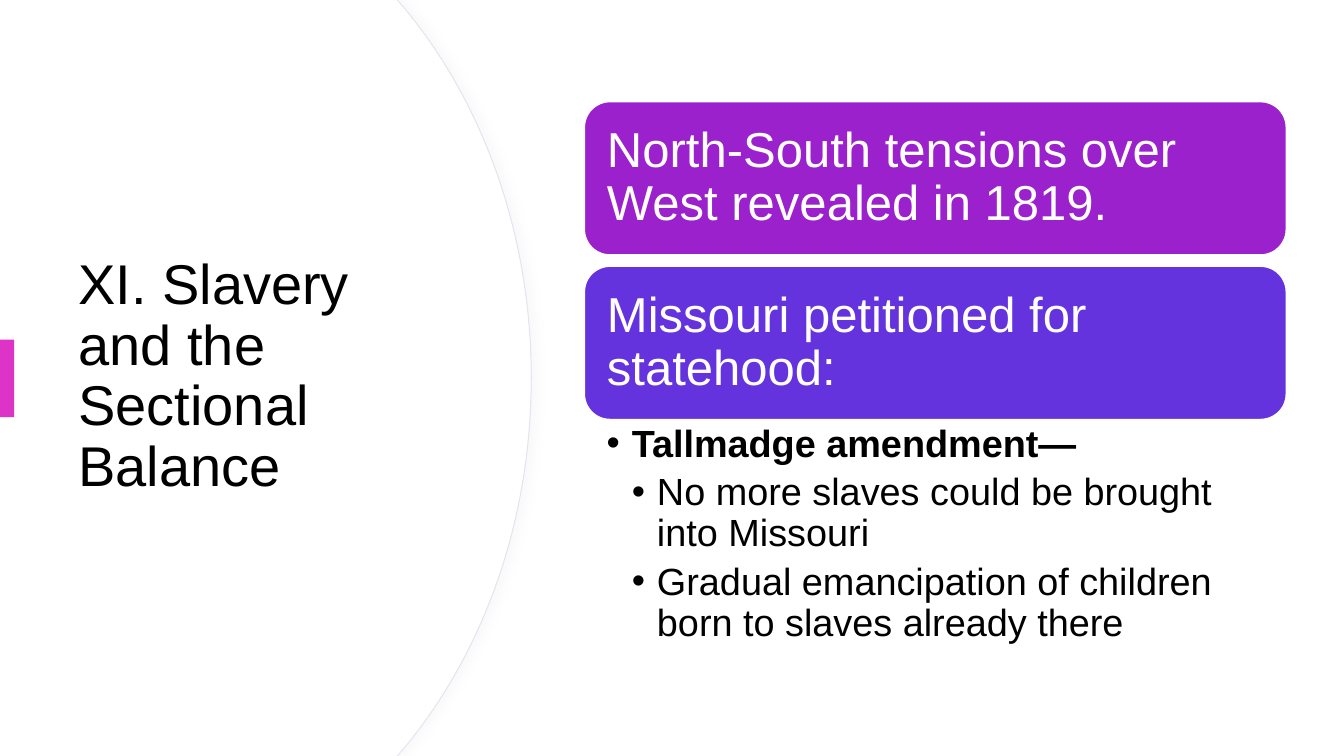
from dataclasses import dataclass

from lxml.etree import SubElement
from pptx import Presentation
from pptx.dml.color import RGBColor
from pptx.enum.shapes import MSO_SHAPE
from pptx.enum.text import MSO_ANCHOR, PP_ALIGN
from pptx.oxml.ns import qn
from pptx.shapes.autoshape import Shape
from pptx.slide import Slide
from pptx.text.text import TextFrame
from pptx.util import Inches, Pt


@dataclass(frozen=True)
class Theme:
    font: str = "Arial"
    text: str = "000000"
    surface: str = "FFFFFF"
    outline: str = "E3E4EF"
    shade: str = "D9D9D9"
    accent: str = "DD33C7"
    purple: str = "9A21CB"
    violet: str = "6533DD"
    title_size: float = 40
    card_size: float = 35
    bullet_size: float = 27
    line_spacing: float = 0.9
    bullet_gap: float = 5.5


@dataclass(frozen=True)
class Area:
    left: float
    top: float
    width: float
    height: float


@dataclass(frozen=True)
class Card:
    text: str
    color: str


@dataclass(frozen=True)
class Bullet:
    text: str
    level: int
    bold: bool = False


THEME = Theme()
WIDTH, HEIGHT = Inches(13.33), Inches(7.5)

TITLE = "XI. Slavery and the Sectional Balance"
BACKDROP_AREA = Area(0, 0, 100, 100)
TITLE_AREA = Area(5.1, 16.93, 29.56, 66)
ACCENT_AREA = Area(0, 44.93, 1.05, 10.27)
FIRST_CARD = Area(43.48, 13.45, 52.22, 20.27)
CARD_GAP = 1.5
BULLETS_HEIGHT = 31.2
INDENT = Inches(0.25)

UPPER_EDGE = ((29.56, 0), (30.08, 1.07), (35.93, 13.6), (39.53, 30.93), (39.53, 50))
CURVE_STARTS = (2, 5)
PANEL_INSET = 0.07

CARDS = (
    Card("North-South tensions over West revealed in 1819.", THEME.purple),
    Card("Missouri petitioned for statehood:", THEME.violet),
)
BULLETS = (
    Bullet("Tallmadge amendment—", 1, bold=True),
    Bullet("No more slaves could be brought into Missouri", 2),
    Bullet("Gradual emancipation of children born to slaves already there", 2),
)


def across(share: float) -> int:
    return round(WIDTH * share / 100)


def down(share: float) -> int:
    return round(HEIGHT * share / 100)


def place(area: Area) -> tuple[int, int, int, int]:
    return across(area.left), down(area.top), across(area.width), down(area.height)


def paint(shape: Shape, fill: str, line: str | None = None, weight: float = 1) -> None:
    shape.shadow.inherit = False
    shape.fill.solid()
    shape.fill.fore_color.rgb = RGBColor.from_string(fill)
    if line is None:
        shape.line.fill.background()
    else:
        shape.line.color.rgb = RGBColor.from_string(line)
        shape.line.width = Pt(weight)


def cast_shadow(shape: Shape) -> None:
    effects = shape._element.spPr.find(qn("a:effectLst"))
    shadow = SubElement(
        effects, qn("a:outerShdw"), blurRad=str(Pt(6)), dist=str(Pt(4)), dir="0"
    )
    color = SubElement(shadow, qn("a:srgbClr"), val=THEME.shade)
    SubElement(color, qn("a:alpha"), val="15000")


def set_up_frame(frame: TextFrame, anchor: MSO_ANCHOR, *insets: float) -> None:
    frame.word_wrap = True
    frame.vertical_anchor = anchor
    left, top, right, bottom = (Inches(inset) for inset in insets)
    frame.margin_left, frame.margin_right = left, right
    frame.margin_top, frame.margin_bottom = top, bottom


def write(paragraph, text: str, size: float, color: str, bold: bool = False) -> None:
    paragraph.alignment = PP_ALIGN.LEFT
    paragraph.line_spacing = THEME.line_spacing
    run = paragraph.add_run()
    run.text = text
    run.font.name = THEME.font
    run.font.size = Pt(size)
    run.font.bold = bold
    run.font.color.rgb = RGBColor.from_string(color)


def bend(shape: Shape) -> None:
    segments = list(shape._element.iter(qn("a:lnTo")))
    for start in CURVE_STARTS:
        curve, *others = segments[start : start + 3]
        curve.tag = qn("a:cubicBezTo")
        for other in others:
            curve.append(other[0])
            other.getparent().remove(other)


def add_panel(slide: Slide, inset: float) -> Shape:
    lower_edge = [(x, 100 - y) for x, y in reversed(UPPER_EDGE[:-1])]
    edge = [(across(x - inset), down(y)) for x, y in [*UPPER_EDGE, *lower_edge]]
    builder = slide.shapes.build_freeform(0, 0)
    builder.add_line_segments(edge + [(0, HEIGHT)], close=True)
    panel = builder.convert_to_shape()
    bend(panel)
    return panel


def add_block(slide: Slide, area: Area, color: str) -> None:
    paint(slide.shapes.add_shape(MSO_SHAPE.RECTANGLE, *place(area)), color)


def add_title(slide: Slide) -> None:
    frame = slide.shapes.add_textbox(*place(TITLE_AREA)).text_frame
    set_up_frame(frame, MSO_ANCHOR.MIDDLE, 0.1, 0.05, 0.1, 0.05)
    write(frame.paragraphs[0], TITLE, THEME.title_size, THEME.text)


def add_card(slide: Slide, card: Card, area: Area) -> None:
    shape = slide.shapes.add_shape(MSO_SHAPE.ROUNDED_RECTANGLE, *place(area))
    paint(shape, card.color, THEME.surface)
    set_up_frame(shape.text_frame, MSO_ANCHOR.MIDDLE, 0.15, 0.15, 0.15, 0.15)
    write(shape.text_frame.paragraphs[0], card.text, THEME.card_size, THEME.surface)


def add_bullets(slide: Slide, area: Area) -> None:
    frame = slide.shapes.add_textbox(*place(area)).text_frame
    set_up_frame(frame, MSO_ANCHOR.TOP, 0.22, 0.05, 0.27, 0.05)
    for index, bullet in enumerate(BULLETS):
        paragraph = frame.add_paragraph() if index else frame.paragraphs[0]
        paragraph.level = bullet.level
        write(paragraph, bullet.text, THEME.bullet_size, THEME.text, bullet.bold)
        paragraph.space_after = Pt(THEME.bullet_gap)
        properties = paragraph._p.get_or_add_pPr()
        properties.set("marL", str(INDENT * bullet.level))
        properties.set("indent", str(-INDENT))
        SubElement(properties, qn("a:buFont"), typeface=THEME.font)
        SubElement(properties, qn("a:buChar"), char="•")


def main() -> None:
    presentation = Presentation()
    presentation.slide_width, presentation.slide_height = WIDTH, HEIGHT
    slide = presentation.slides.add_slide(presentation.slide_layouts[6])

    add_block(slide, BACKDROP_AREA, THEME.surface)
    outlined_panel = add_panel(slide, 0)
    paint(outlined_panel, THEME.surface, THEME.outline, 0.75)
    cast_shadow(outlined_panel)
    paint(add_panel(slide, PANEL_INSET), THEME.surface)

    add_title(slide)
    add_block(slide, ACCENT_AREA, THEME.accent)

    left, width, height = FIRST_CARD.left, FIRST_CARD.width, FIRST_CARD.height
    pitch = height + CARD_GAP
    for index, card in enumerate(CARDS):
        add_card(slide, card, Area(left, FIRST_CARD.top + index * pitch, width, height))
    bullets_top = FIRST_CARD.top + len(CARDS) * pitch - CARD_GAP
    add_bullets(slide, Area(left, bullets_top, width, BULLETS_HEIGHT))

    presentation.save("out.pptx")


if __name__ == "__main__":
    main()
